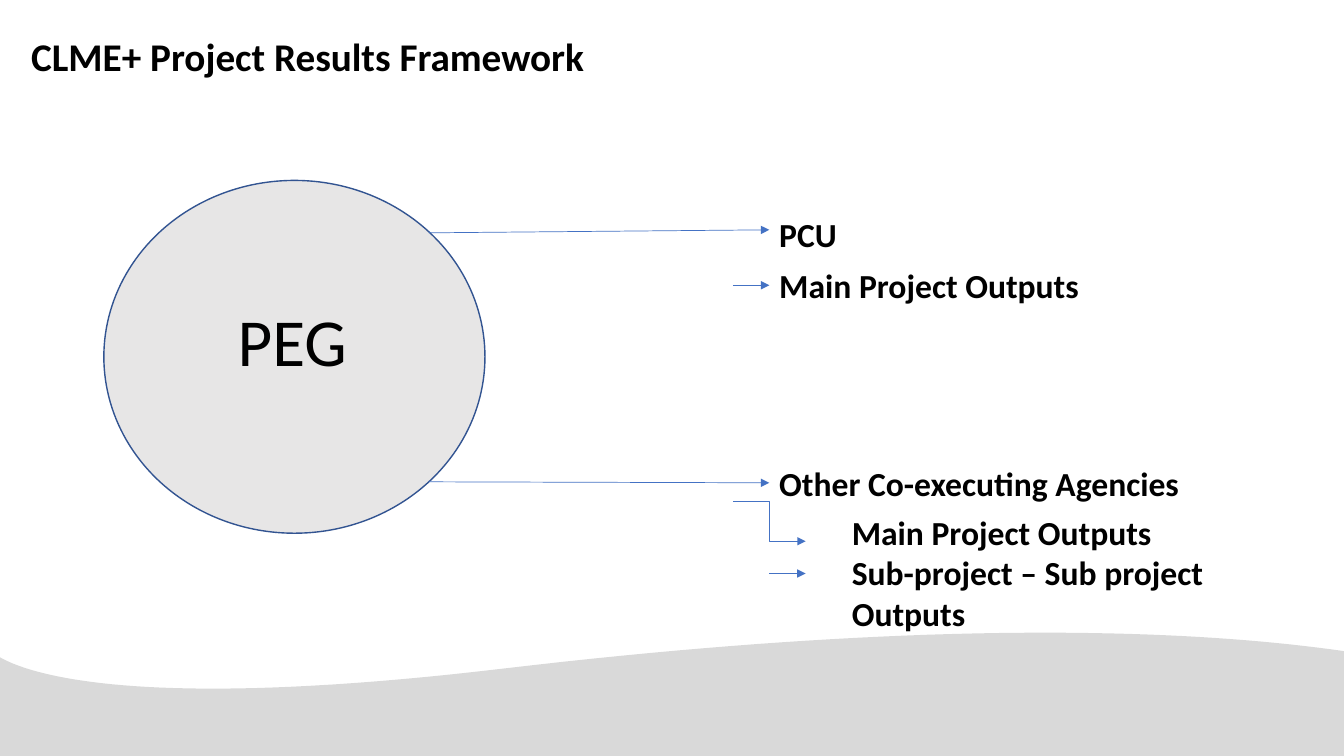
from lxml import etree
from pptx import Presentation
from pptx.dml.color import RGBColor
from pptx.enum.shapes import MSO_CONNECTOR as LINK, MSO_SHAPE
from pptx.enum.text import MSO_ANCHOR, MSO_AUTO_SIZE, PP_ALIGN
from pptx.oxml.ns import qn
from pptx.util import Inches, Pt

COLORS = {name: RGBColor.from_string(value) for name, value in {
    "text": "000000", "wave": "D9D9D9", "circle": "E7E6E6",
    "outline": "325491", "arrow": "4472C4"}.items()}

deck = Presentation()
deck.slide_width, deck.slide_height = Inches(13.33), Inches(7.5)
page = deck.slides.add_slide(deck.slide_layouts[5])


def place_text(box, area, lines, size, bold=True):
    box.left, box.top, box.width, box.height = map(Inches, area)
    frame = box.text_frame
    frame.word_wrap = True
    frame.auto_size = MSO_AUTO_SIZE.NONE
    frame.vertical_anchor = MSO_ANCHOR.TOP
    para = frame.paragraphs[0]
    para.alignment = PP_ALIGN.LEFT
    for index, line in enumerate(lines):
        if index:
            para.add_line_break()
        span = para.add_run()
        span.text = line
        span.font.name, span.font.size, span.font.bold = "Calibri", Pt(size), bold
        span.font.color.rgb = COLORS["text"]


def curve_points(start, first, second, end, steps=40):
    for step in range(1, steps + 1):
        t = step / steps
        yield tuple(Inches((1 - t) ** 3 * a + 3 * (1 - t) ** 2 * t * b
                           + 3 * (1 - t) * t ** 2 * c + t ** 3 * d)
                    for a, b, c, d in zip(start, first, second, end))


# Grey wave along the bottom
crest = [(13.33, 6.46), (11.65, 6.22), (9.02, 6.16), (5.02, 6.63),
         (1.33, 7.07), (0.26, 6.68), (-0.02, 6.51)]
outline = page.shapes.build_freeform(Inches(13.33), Inches(7.5))
outline.add_line_segments(
    [(Inches(13.33), Inches(6.46)), *curve_points(*crest[:4]),
     *curve_points(*crest[3:]), (Inches(-0.02), Inches(7.5))], close=True)
wave = outline.convert_to_shape()
wave.shadow.inherit = False
wave.fill.solid()
wave.fill.fore_color.rgb = COLORS["wave"]
wave.line.fill.background()

# Title
place_text(page.shapes.title, (0.21, 0.27, 9.02, 0.57),
           ["CLME+ Project Results Framework"], 28)

# PEG circle
circle = page.shapes.add_shape(MSO_SHAPE.OVAL, Inches(1.03), Inches(1.79),
                               Inches(3.78), Inches(3.5))
circle.shadow.inherit = False
circle.fill.solid()
circle.fill.fore_color.rgb = COLORS["circle"]
circle.line.color.rgb = COLORS["outline"]
circle.line.width = Pt(1)

# Labels
labels = [
    ((2.26, 2.92, 1.73, 0.91), ["PEG"], 48, False),
    ((7.63, 2.07, 5.32, 0.5), ["PCU"], 24, True),
    ((7.63, 2.58, 5.32, 0.5), ["Main Project Outputs"], 24, True),
    ((7.63, 4.54, 5.32, 0.5), ["Other Co-executing Agencies"], 24, True),
    ((8.35, 5.03, 3.87, 1.31),
     ["Main Project Outputs", "Sub-project – Sub project Outputs"], 24, True),
]
for area, lines, size, bold in labels:
    place_text(page.shapes.add_textbox(*map(Inches, area)), area, lines, size, bold)

# Arrows
arrows = [
    (LINK.STRAIGHT, 4.25, 2.31, 7.63, 2.28),
    (LINK.STRAIGHT, 7.27, 2.83, 7.63, 2.83),
    (LINK.STRAIGHT, 4.25, 4.78, 7.63, 4.79),
    (LINK.ELBOW, 7.27, 4.97, 7.99, 5.37),
    (LINK.STRAIGHT, 7.63, 5.69, 7.99, 5.69),
]
for kind, *ends in arrows:
    arrow = page.shapes.add_connector(kind, *map(Inches, ends))
    arrow.line.color.rgb = COLORS["arrow"]
    arrow.line.width = Pt(0.5)
    etree.SubElement(arrow.line._get_or_add_ln(), qn("a:tailEnd"), type="triangle")
    etree.SubElement(arrow._element.spPr, qn("a:effectLst"))

deck.save("out.pptx")
